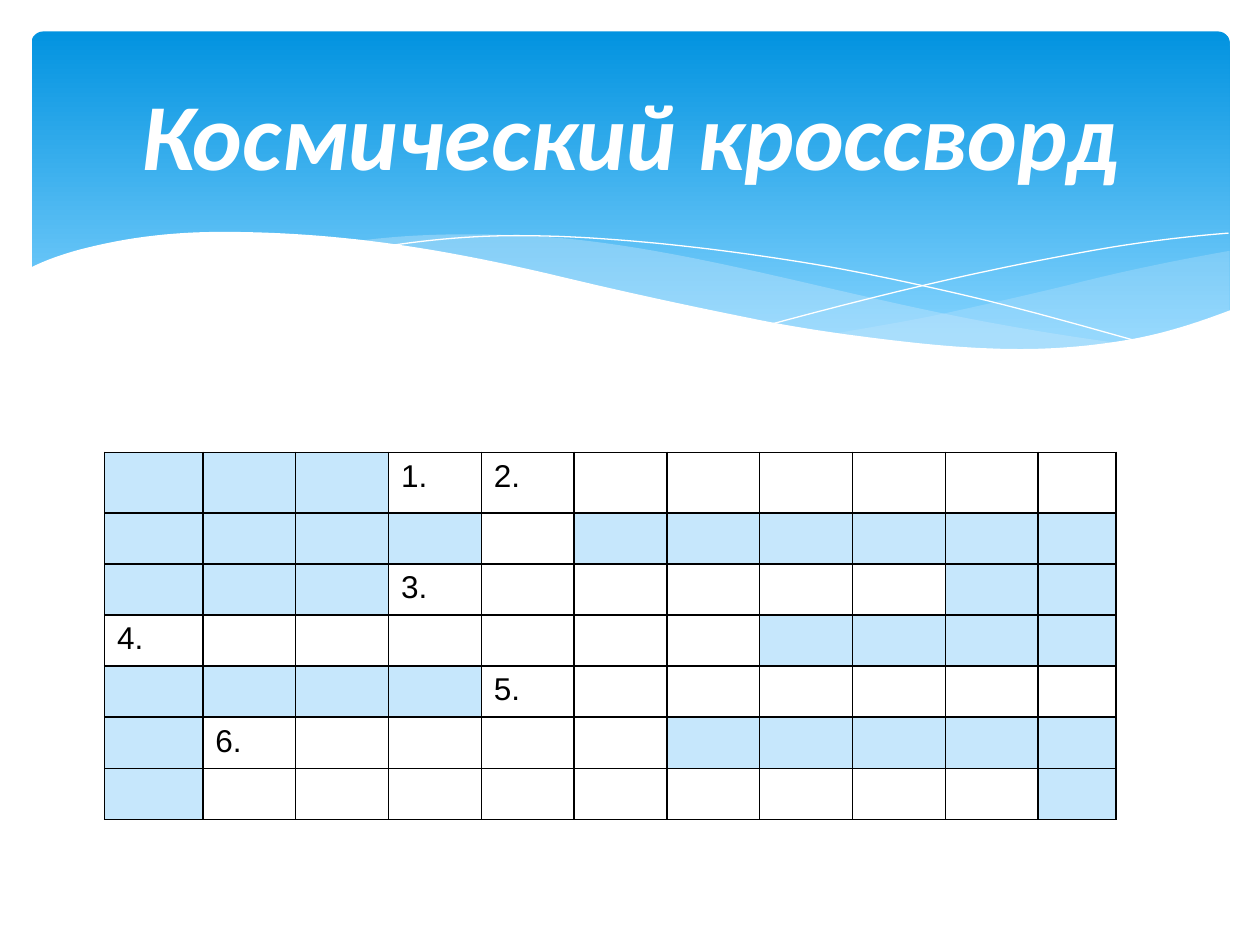
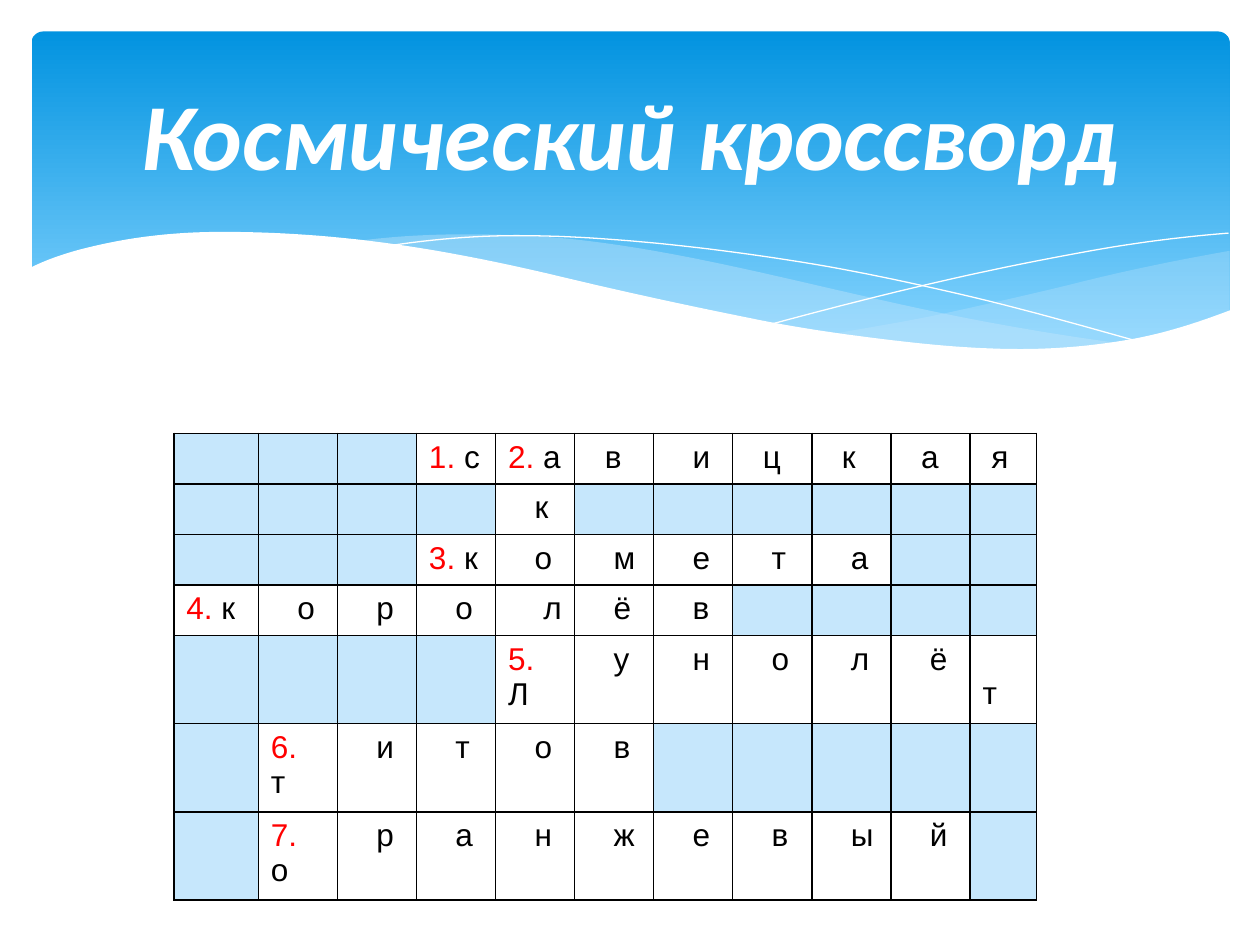
from itertools import pairwise

from lxml import etree
from pptx import Presentation
from pptx.dml.color import RGBColor
from pptx.enum.shapes import MSO_SHAPE
from pptx.enum.text import MSO_ANCHOR, PP_ALIGN
from pptx.oxml.ns import qn
from pptx.util import Inches, Pt

ROUNDED = MSO_SHAPE.ROUNDED_RECTANGLE
MIDDLE = MSO_ANCHOR.MIDDLE
CENTER = PP_ALIGN.CENTER

COLORS = {
    "sky_top": "0293E0",
    "sky_bottom": "83D3FE",
    "pale": "C6E7FC",
    "white": "FFFFFF",
    "black": "000000",
    "red": "FF0000",
}

CURVE_STEPS = 12
WAVES = [
    {"fill": "pale", "opacity": 29, "knots": [
        (6.61, 2.65, 0.14), (7.45, 2.75, 0.08), (8.12, 2.78, 0), (8.97, 2.7, -0.2),
        (9.76, 2.47, -0.4), (9.76, 1.99, -0.18), (8.61, 2.23, -0.25),
        (7.53, 2.48, -0.22), (6.61, 2.65, -0.18)]},
    {"fill": "pale", "opacity": 40, "knots": [
        (2.86, 1.91, -0.13), (3.7, 1.86, 0), (4.65, 1.91, 0.12), (6.29, 2.22, 0.23),
        (7.75, 2.54, 0.19), (8.93, 2.73, 0.13), (8.93, 2.73, -0.11), (8.12, 2.78, 0),
        (7.22, 2.74, 0.11), (6.01, 2.55, 0.19), (4.49, 2.22, 0.24),
        (3.42, 1.99, 0.17), (2.86, 1.91, 0.12)]},
    {"fill": None, "opacity": 100, "knots": [
        (3.09, 1.95, -0.15), (4.1, 1.87, 0), (5.1, 1.92, 0.09), (6.36, 2.08, 0.16),
        (7.6, 2.33, 0.23), (9.07, 2.72, 0.28)]},
    {"fill": None, "opacity": 100, "knots": [
        (6.13, 2.57, -0.27), (7.48, 2.23, -0.23), (8.66, 1.99, -0.18), (9.75, 1.85, -0.08)]},
    {"fill": "white", "opacity": 100, "knots": [
        (0.23, 2.13, -0.5), (0.85, 1.93, -0.21), (1.77, 1.84, 0), (2.92, 1.91, 0.12),
        (4.47, 2.2, 0.24), (6.03, 2.54, 0.2), (7.08, 2.7, 0.12), (8.1, 2.77, 0),
        (8.99, 2.69, -0.18), (9.77, 2.46, -0.38), (9.77, 3.29, 0), (0.23, 3.29, 0)]},
]

CROSSWORD = [
    "###савицкая",
    "####к######",
    "###комета##",
    "королёв####",
    "####Лунолёт",
    "#титов#####",
    "#оранжевый#",
]
NUMBERS = {(0, 3): 1, (0, 4): 2, (2, 3): 3, (3, 0): 4, (4, 4): 5, (5, 1): 6, (6, 1): 7}
WRAPPED_NUMBERS = (5, 6, 7)
LETTER_INDENTS = {
    (0, 5): 0.14, (0, 7): 0.14, (0, 8): 0.14, (0, 9): 0.14,
    (0, 10): 0.07, (3, 4): 0.28, (4, 10): 0,
}

PAGES = [
    {"solved": False, "place": (0.83, 3.59, 8.03), "edges": (0.78, 0.62),
     "rows": [0.48] + [0.4] * 6},
    {"solved": True, "place": (1.38, 3.44, 6.85), "edges": (0.67, 0.53),
     "rows": [0.4] * 4 + [0.66] * 3},
]


def write_text(para, text, size=18, color="black", font="Arial", bold=False, italic=False):
    span = para.add_run()
    span.text = text
    span.font.size = Pt(size)
    span.font.name = font
    span.font.bold = bold
    span.font.italic = italic
    span.font.color.rgb = RGBColor.from_string(COLORS[color])


def add_borders(cell):
    properties = cell._tc.get_or_add_tcPr()
    for side in ("a:lnL", "a:lnR", "a:lnT", "a:lnB"):
        line = etree.SubElement(properties, qn(side), w=str(Pt(1)))
        solid = etree.SubElement(line, qn("a:solidFill"))
        etree.SubElement(solid, qn("a:srgbClr"), val=COLORS["black"])


deck = Presentation()
deck.slide_width = Inches(10)
deck.slide_height = Inches(7.5)

for settings in PAGES:
    page = deck.slides.add_slide(deck.slide_layouts[6])

    band = page.shapes.add_shape(ROUNDED, Inches(0.25), Inches(0.25), Inches(9.51), Inches(2.7))
    band.adjustments[0] = 0.034
    band.shadow.inherit = False
    band.line.fill.background()
    band.fill.gradient()
    band.fill.gradient_angle = 270
    for stop, position, name in zip(band.fill.gradient_stops, (0, 0.9), ("sky_top", "sky_bottom")):
        stop.position = position
        stop.color.rgb = RGBColor.from_string(COLORS[name])

    for style in WAVES:
        knots = style["knots"]
        points = []
        for (x1, y1, slope1), (x2, y2, slope2) in pairwise(knots):
            run = x2 - x1
            for step in range(1, CURVE_STEPS + 1):
                t = step / CURVE_STEPS
                ease = t * t * (3 - 2 * t)
                bend = run * t * (1 - t) * (slope1 * (1 - t) - slope2 * t)
                points.append((Inches(x1 + run * t), Inches(y1 + (y2 - y1) * ease + bend)))
        builder = page.shapes.build_freeform(Inches(knots[0][0]), Inches(knots[0][1]))
        builder.add_line_segments(points, close=style["fill"] is not None)
        wave = builder.convert_to_shape()
        wave.shadow.inherit = False
        if style["fill"]:
            wave.line.fill.background()
            wave.fill.solid()
            wave.fill.fore_color.rgb = RGBColor.from_string(COLORS[style["fill"]])
            if style["opacity"] < 100:
                tint = wave._element.spPr.find(qn("a:solidFill")).find(qn("a:srgbClr"))
                etree.SubElement(tint, qn("a:alpha"), val=str(style["opacity"] * 1000))
        else:
            wave.fill.background()
            wave.line.color.rgb = RGBColor.from_string(COLORS["white"])
            wave.line.width = Pt(0)

    left, top, width = settings["place"]
    first, last = settings["edges"]
    inner = (width - first - last) / 9
    heights = settings["rows"]
    frame = page.shapes.add_table(
        len(CROSSWORD), len(CROSSWORD[0]),
        Inches(left), Inches(top), Inches(width), Inches(sum(heights)))
    table = frame.table
    table.first_row = False
    table.horz_banding = False
    for column, size in zip(table.columns, [first] + [inner] * 9 + [last]):
        column.width = Inches(size)
    for row, size in zip(table.rows, heights):
        row.height = Inches(size)

    for row, word in enumerate(CROSSWORD):
        for column, letter in enumerate(word):
            cell = table.cell(row, column)
            add_borders(cell)
            if letter == "#":
                cell.fill.solid()
                cell.fill.fore_color.rgb = RGBColor.from_string(COLORS["pale"])
                continue
            cell.fill.background()
            para = cell.text_frame.paragraphs[0]
            number = NUMBERS.get((row, column))
            if not settings["solved"]:
                if number and number < 7:
                    write_text(para, f"{number}.")
            elif number:
                if number in WRAPPED_NUMBERS:
                    cell.margin_right = Inches(0.2)
                write_text(para, f"{number}. ", color="red")
                write_text(para, letter)
            else:
                indent = LETTER_INDENTS.get((row, column), 0.21)
                cell.margin_left = Inches(0.1 + indent)
                cell.margin_right = Inches(0.02)
                if indent == 0:
                    cell.margin_top = Inches(0.32)
                write_text(para, letter)

    box = page.shapes.add_textbox(Inches(0.5), Inches(0.37), Inches(9), Inches(1.37))
    box.text_frame.word_wrap = True
    box.text_frame.vertical_anchor = MIDDLE
    para = box.text_frame.paragraphs[0]
    para.alignment = CENTER
    write_text(para, "Космический кроссворд", size=54, color="white",
               font="Calibri", bold=True, italic=True)

deck.save("out.pptx")
